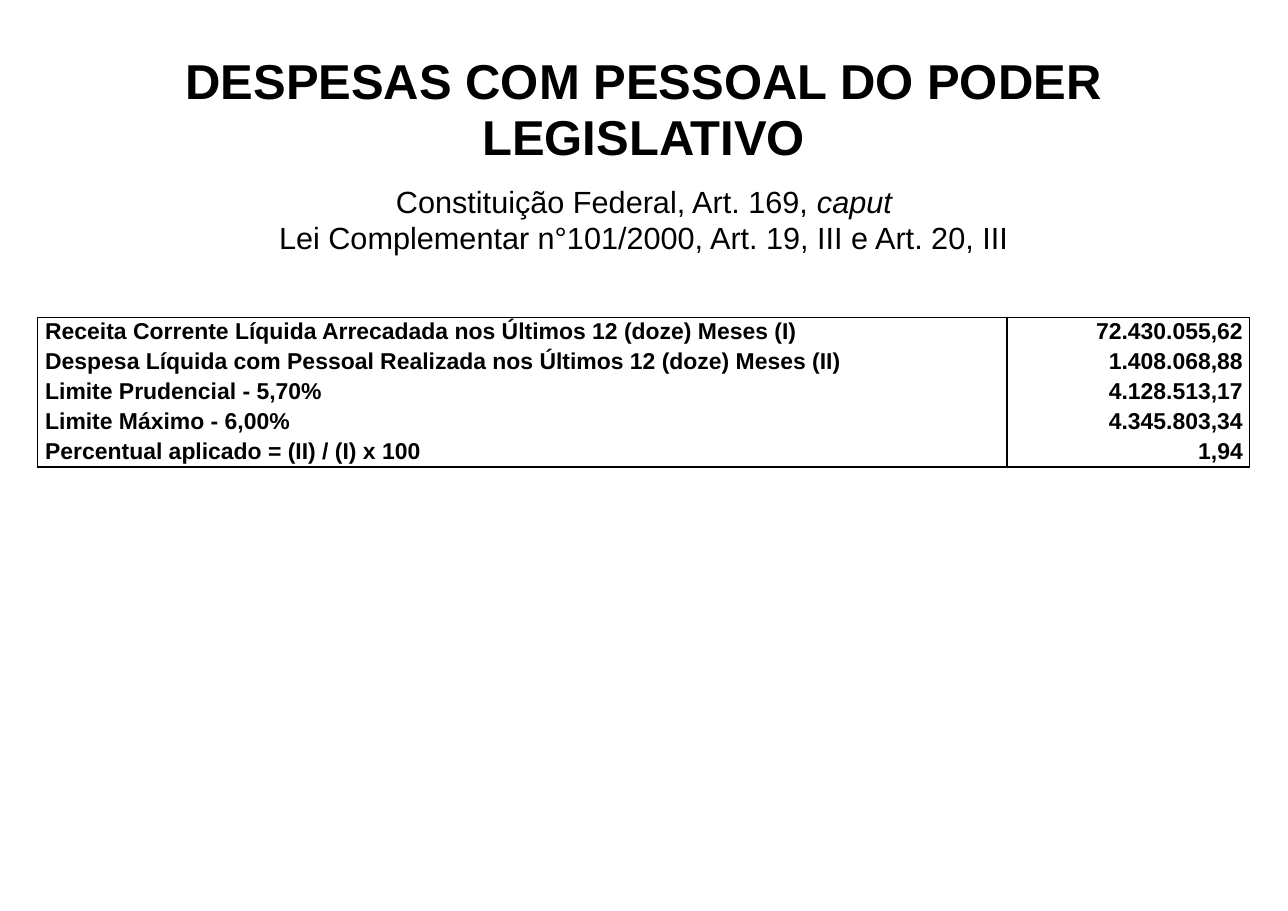
from lxml import etree
from pptx import Presentation
from pptx.dml.color import RGBColor
from pptx.enum.text import MSO_ANCHOR, PP_ALIGN
from pptx.oxml.ns import qn
from pptx.util import Inches, Pt

BLACK = RGBColor(0, 0, 0)
FONT = "Arial"
CENTER, LEFT, RIGHT = PP_ALIGN.CENTER, PP_ALIGN.LEFT, PP_ALIGN.RIGHT
TOP = MSO_ANCHOR.TOP
NO_STYLE = "{2D5ABB26-0587-4C30-8999-92F81FD0307C}"

TITLE = "DESPESAS COM PESSOAL DO PODER LEGISLATIVO"
LAWS = [
    [("Constituição Federal, Art. 169, ", False), ("caput", True)],
    [("Lei Complementar n°101/2000, Art. 19, III e Art. 20, III", False)],
]
ROWS = [
    ("Receita Corrente Líquida Arrecadada nos Últimos 12 (doze) Meses (I)", "72.430.055,62"),
    ("Despesa Líquida com Pessoal Realizada nos Últimos 12 (doze) Meses (II)", "1.408.068,88"),
    ("Limite Prudencial - 5,70%", "4.128.513,17"),
    ("Limite Máximo - 6,00%", "4.345.803,34"),
    ("Percentual aplicado = (II) / (I) x 100", "1,94"),
]
COL_WIDTHS = (8.8, 2.2)


def format_paragraph(p, size, align, spacing, before=0, bold=False):
    p.alignment = align
    p.line_spacing = Pt(spacing)
    p.space_before = Pt(before)
    for r in p.runs:
        r.font.name = FONT
        r.font.size = Pt(size)
        r.font.bold = bold
        r.font.color.rgb = BLACK


def set_frame(tf, top):
    tf.word_wrap = True
    tf.vertical_anchor = TOP
    tf.margin_left = tf.margin_right = tf.margin_bottom = 0
    tf.margin_top = Inches(top)


def add_title(slide, x, y, w, h):
    sp = slide.shapes.title
    sp.left, sp.top, sp.width, sp.height = map(Inches, (x, y, w, h))
    tf = sp.text_frame
    set_frame(tf, 0.05)
    tf.text = TITLE
    format_paragraph(tf.paragraphs[0], 32, CENTER, 36.8, 3.6, True)


def add_laws(slide, x, y, w, h):
    tf = slide.shapes.add_textbox(*map(Inches, (x, y, w, h))).text_frame
    set_frame(tf, 0.01)
    for i, law in enumerate(LAWS):
        p = tf.add_paragraph() if i else tf.paragraphs[0]
        for text, italic in law:
            r = p.add_run()
            r.text = text
            r.font.italic = italic
        format_paragraph(p, 20, CENTER, 23.4, 0 if i else 1.1)


def set_borders(cell, sides):
    tc_pr = cell._tc.get_or_add_tcPr()
    for side in sides:
        ln = etree.SubElement(tc_pr, qn("a:ln" + side), w=str(Pt(1)))
        fill = etree.SubElement(ln, qn("a:solidFill"))
        etree.SubElement(fill, qn("a:srgbClr"), val=str(BLACK))


def add_expenses(slide, x, y, w, h):
    frame = slide.shapes.add_table(len(ROWS), 2, *map(Inches, (x, y, w, h)))
    table = frame.table
    table.first_row = table.horz_banding = False
    table._tbl.tblPr.find(qn("a:tableStyleId")).text = NO_STYLE
    for col, width in zip(table.columns, COL_WIDTHS):
        col.width = Inches(width)
    last = len(ROWS) - 1
    for i, row in enumerate(ROWS):
        table.rows[i].height = Inches(h / len(ROWS))
        sides = "LR" + ("T" if i == 0 else "") + ("B" if i == last else "")
        for j, text in enumerate(row):
            cell = table.cell(i, j)
            set_borders(cell, sides)
            cell.fill.background()
            cell.vertical_anchor = TOP
            cell.margin_left = Inches(0.07)
            cell.margin_right = Inches(0.06)
            cell.margin_top = cell.margin_bottom = 0
            cell.text = text
            align = RIGHT if j else LEFT
            format_paragraph(cell.text_frame.paragraphs[0], 15, align, 17.8, 0, True)


def main():
    prs = Presentation()
    prs.slide_width, prs.slide_height = Inches(11.69), Inches(8.27)
    slide = prs.slides.add_slide(prs.slide_layouts[5])
    add_title(slide, 0.41, 0.43, 10.87, 1.07)
    add_laws(slide, 2.51, 1.66, 6.67, 0.68)
    add_expenses(slide, 0.34, 2.88, sum(COL_WIDTHS), 1.36)
    prs.save("out.pptx")


if __name__ == "__main__":
    main()
